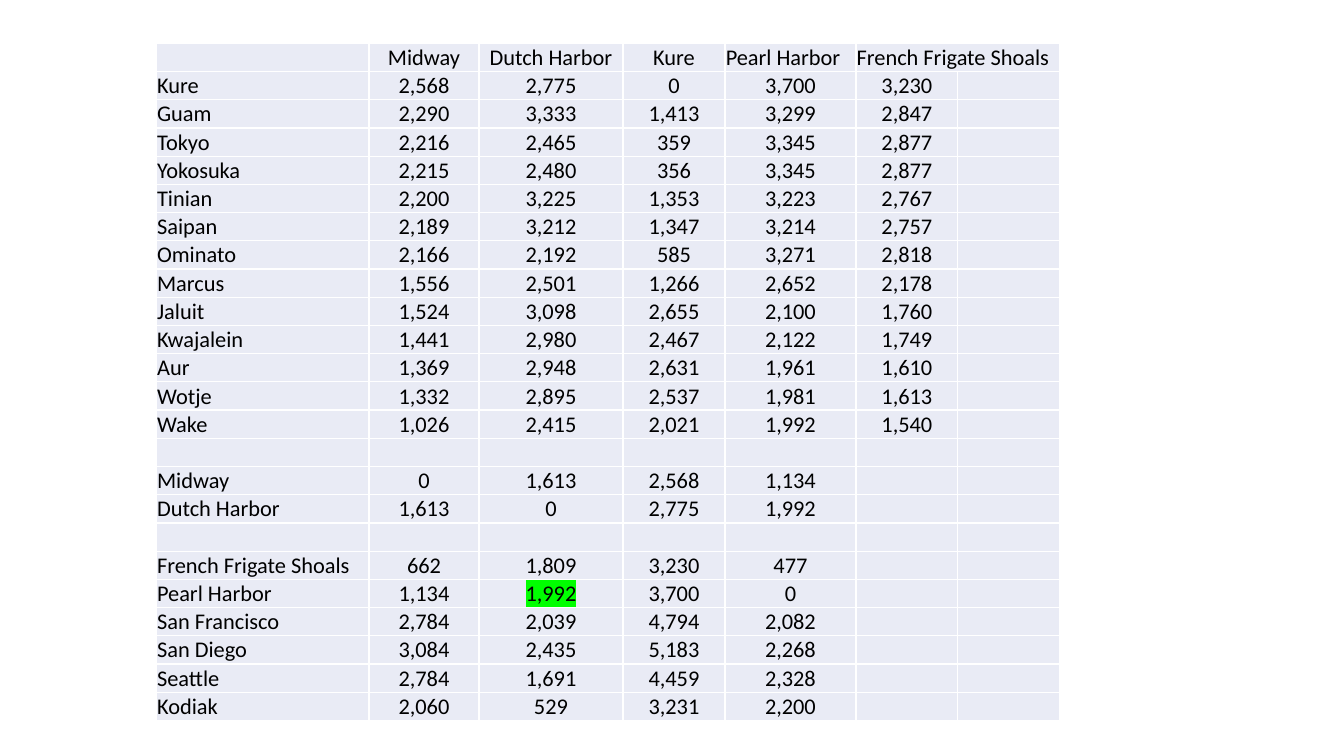
from lxml import etree
from pptx import Presentation
from pptx import util as u
from pptx.dml.color import RGBColor
from pptx.enum import text
from pptx.oxml.ns import qn

HEADINGS = ["", "Midway", "Dutch Harbor", "Kure", "Pearl Harbor", "French Frigate Shoals"]
DISTANCES = [
    ("Kure", "2,568 2,775 0 3,700 3,230"),
    ("Guam", "2,290 3,333 1,413 3,299 2,847"),
    ("Tokyo", "2,216 2,465 359 3,345 2,877"),
    ("Yokosuka", "2,215 2,480 356 3,345 2,877"),
    ("Tinian", "2,200 3,225 1,353 3,223 2,767"),
    ("Saipan", "2,189 3,212 1,347 3,214 2,757"),
    ("Ominato", "2,166 2,192 585 3,271 2,818"),
    ("Marcus", "1,556 2,501 1,266 2,652 2,178"),
    ("Jaluit", "1,524 3,098 2,655 2,100 1,760"),
    ("Kwajalein", "1,441 2,980 2,467 2,122 1,749"),
    ("Aur", "1,369 2,948 2,631 1,961 1,610"),
    ("Wotje", "1,332 2,895 2,537 1,981 1,613"),
    ("Wake", "1,026 2,415 2,021 1,992 1,540"),
    ("", ""),
    ("Midway", "0 1,613 2,568 1,134"),
    ("Dutch Harbor", "1,613 0 2,775 1,992"),
    ("", ""),
    ("French Frigate Shoals", "662 1,809 3,230 477"),
    ("Pearl Harbor", "1,134 1,992 3,700 0"),
    ("San Francisco", "2,784 2,039 4,794 2,082"),
    ("San Diego", "3,084 2,435 5,183 2,268"),
    ("Seattle", "2,784 1,691 4,459 2,328"),
    ("Kodiak", "2,060 529 3,231 2,200"),
]
COLUMN_WIDTHS = [5.36, 2.77, 3.63, 2.57, 3.3, 2.57, 2.57]
HIGHLIGHTED = ("Pearl Harbor", "Dutch Harbor")


def color(value):
    return RGBColor.from_string(value)


class DistanceSlide:
    font, size = "Calibri", u.Pt(16)
    ink, fill, border, marker = "000000", "E9EBF5", "FFFFFF", "00FF00"
    row_height = u.Cm(0.7)
    inset = u.Cm(0.02)

    def __init__(self, deck):
        self.page = deck.slides.add_slide(deck.slide_layouts[6])

    def table(self, left, top, widths, rows):
        frame = self.page.shapes.add_table(
            len(rows), len(widths), u.Cm(left), u.Cm(top),
            u.Cm(sum(widths)), self.row_height * len(rows))
        grid = frame.table
        for column, width in zip(grid.columns, widths):
            column.width = u.Cm(width)
        for row in grid.rows:
            row.height = self.row_height
            for cell in row.cells:
                self.style_cell(cell)
        return grid

    def style_cell(self, cell):
        cell.margin_left = cell.margin_right = cell.margin_top = self.inset
        cell.margin_bottom = 0
        cell.vertical_anchor = text.MSO_ANCHOR.BOTTOM
        properties = cell._tc.get_or_add_tcPr()
        for side in ("a:lnL", "a:lnR", "a:lnT", "a:lnB"):
            line = etree.SubElement(properties, qn(side), w=str(u.Pt(1)))
            solid = etree.SubElement(line, qn("a:solidFill"))
            etree.SubElement(solid, qn("a:srgbClr"), val=self.border)
        cell.fill.solid()
        cell.fill.fore_color.rgb = color(self.fill)

    def cell_text(self, cell, words, centred, highlighted):
        para = cell.text_frame.paragraphs[0]
        if not words:
            etree.SubElement(para._p, qn("a:endParaRPr"), sz=str(int(self.size.pt * 100)))
            return
        para.alignment = text.PP_ALIGN.CENTER if centred else text.PP_ALIGN.LEFT
        span = para.add_run()
        span.text = words
        span.font.name = self.font
        span.font.size = self.size
        span.font.color.rgb = color(self.ink)
        if highlighted:
            properties = span._r.get_or_add_rPr()
            highlight = etree.Element(qn("a:highlight"))
            etree.SubElement(highlight, qn("a:srgbClr"), val=self.marker)
            properties.find(qn("a:solidFill")).addnext(highlight)


def main():
    deck = Presentation()
    deck.slide_width, deck.slide_height = u.Cm(33.87), u.Cm(19.05)
    slide = DistanceSlide(deck)

    rows = [HEADINGS] + [[place] + miles.split() for place, miles in DISTANCES]
    headings = HEADINGS + [""]
    grid = slide.table(3.94, 1.09, COLUMN_WIDTHS, rows)
    for r, row in enumerate(rows):
        padded = row + [""] * (len(COLUMN_WIDTHS) - len(row))
        for c, words in enumerate(padded):
            centred = c > 0 and (r > 0 or c < 4)
            highlighted = (row[0], headings[c]) == HIGHLIGHTED
            slide.cell_text(grid.cell(r, c), words, centred, highlighted)
    grid.cell(0, 5).merge(grid.cell(0, 6))

    deck.save("out.pptx")


if __name__ == "__main__":
    main()
